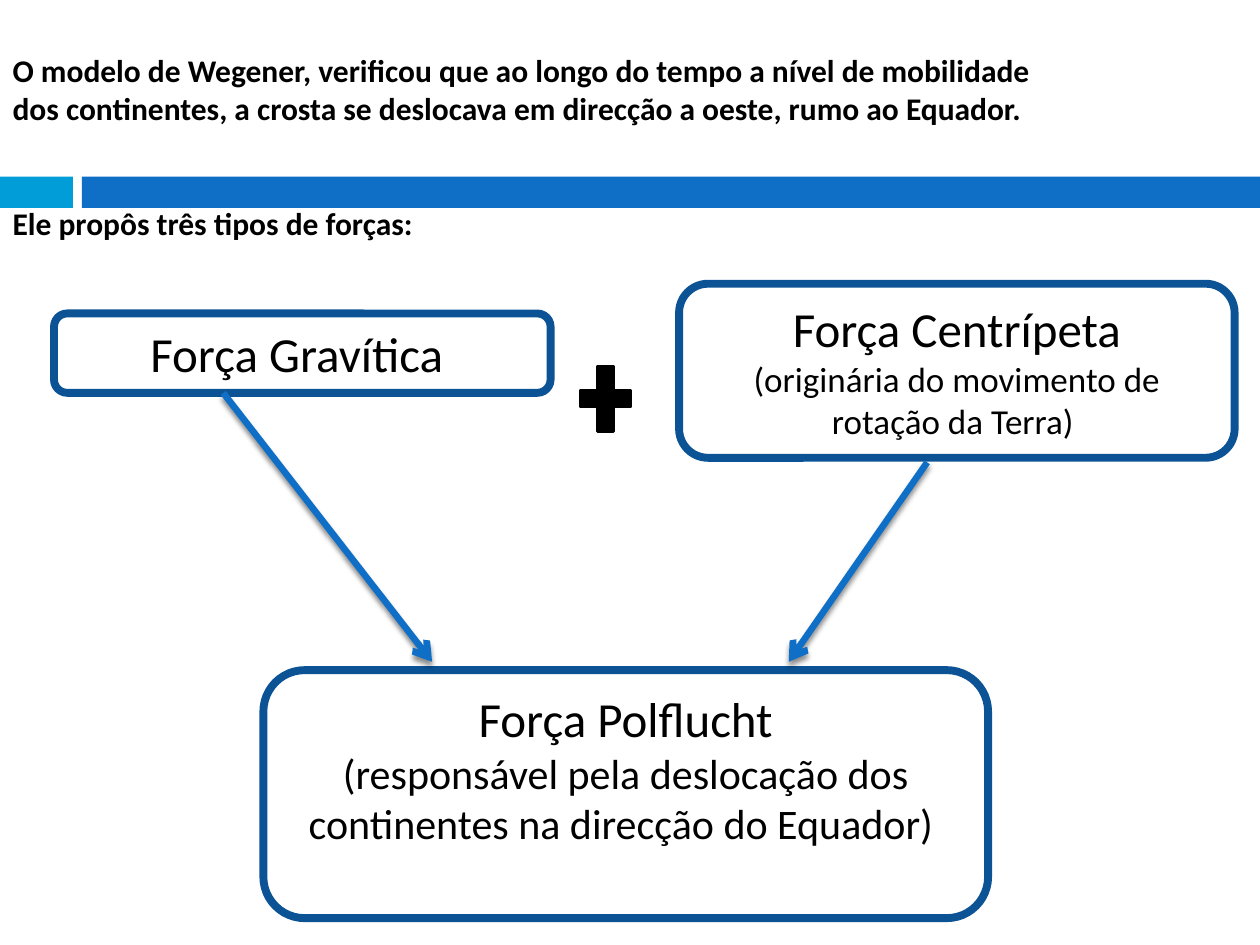
from lxml import etree
from pptx import Presentation
from pptx import util as u
from pptx.dml.color import RGBColor
from pptx.enum import shapes, text
from pptx.oxml import parse_xml
from pptx.oxml.ns import nsdecls, qn

COLOURS = {"black": "000000", "border": "0B5394", "arrow": "0F6FC6",
           "accent": "009DD9", "band": "0F6FC6"}


def colour(name):
    return RGBColor.from_string(COLOURS[name])


class ForcesSlide:
    font_name = "Calibri"

    def __init__(self, deck):
        self.slide = deck.slides.add_slide(deck.slide_layouts[5])

    def paragraph(self, frame, index, words, size, align, bold=False):
        para = frame.paragraphs[0] if index == 0 else frame.add_paragraph()
        para.alignment = align
        run = para.add_run()
        run.text = words
        run.font.name = self.font_name
        run.font.size = u.Pt(size)
        run.font.bold = bold
        run.font.color.rgb = colour("black")
        return para

    def title(self, left, top, width, height, sentences, gap):
        heading = self.slide.shapes.title
        heading.left, heading.top = u.Cm(left), u.Cm(top)
        heading.width, heading.height = u.Cm(width), u.Cm(height)
        frame = heading.text_frame
        frame.word_wrap = True
        frame.auto_size = text.MSO_AUTO_SIZE.NONE
        frame.vertical_anchor = text.MSO_ANCHOR.TOP
        for index, sentence in enumerate(sentences):
            para = self.paragraph(frame, index, sentence, 18, text.PP_ALIGN.LEFT, True)
            para.space_before = u.Pt(gap if index else 0)

    def shape(self, kind, left, top, width, height, fill=None, line=None, weight=0):
        item = self.slide.shapes.add_shape(
            kind, u.Cm(left), u.Cm(top), u.Cm(width), u.Cm(height))
        item.shadow.inherit = False
        if fill:
            item.fill.solid()
            item.fill.fore_color.rgb = colour(fill)
        else:
            item.fill.background()
        if line:
            item.line.color.rgb = colour(line)
            item.line.width = u.Pt(weight)
        else:
            item.line.fill.background()
        return item

    def force(self, left, top, width, height, lines):
        """Outlined rounded box; lines are (words, size) pairs."""
        box = self.shape(shapes.MSO_SHAPE.ROUNDED_RECTANGLE, left, top, width, height,
                         line="border", weight=4.5)
        frame = box.text_frame
        frame.word_wrap = True
        frame.vertical_anchor = text.MSO_ANCHOR.TOP
        for index, (words, size) in enumerate(lines):
            self.paragraph(frame, index, words, size, text.PP_ALIGN.CENTER)

    def plus(self, left, top, width, height):
        sign = self.shape(shapes.MSO_SHAPE.MATH_PLUS, left, top, width, height,
                          "black", "black", 1.5)
        sign.adjustments[0] = 0.235

    def arrow(self, start, end):
        link = self.slide.shapes.add_connector(
            shapes.MSO_CONNECTOR.STRAIGHT, *(u.Cm(value) for value in start + end))
        link.line.color.rgb = colour("arrow")
        link.line.width = u.Pt(3.75)
        etree.SubElement(link.line._get_or_add_ln(), qn("a:tailEnd"), type="arrow")
        link._element.spPr.append(parse_xml(
            f'<a:effectLst {nsdecls("a")}>'
            f'<a:outerShdw blurRad="{u.Pt(3)}" dist="{u.Pt(2.4)}" dir="5400000" rotWithShape="0">'
            f'<a:srgbClr val="{COLOURS["black"]}"><a:alpha val="45000"/></a:srgbClr>'
            '</a:outerShdw></a:effectLst>'))


def main():
    deck = Presentation()
    deck.slide_width, deck.slide_height = u.Cm(25.4), u.Cm(19.05)
    forces = ForcesSlide(deck)

    for left, width, fill in ((0, 1.47, "accent"), (1.65, 23.75, "band")):
        forces.shape(shapes.MSO_SHAPE.RECTANGLE, left, 3.56, width, 0.63, fill)

    forces.title(0, 0.91, 21.79, 4.88, [
        "O modelo de Wegener, verificou que ao longo do tempo a nível de mobilidade "
        "dos continentes, a crosta se deslocava em direcção a oeste, rumo ao Equador.",
        "Ele propôs três tipos de forças:"], gap=44)

    forces.force(1.09, 6.32, 10.01, 1.6, [("Força Gravítica ", 28)])
    forces.force(13.69, 5.72, 11.2, 3.51, [
        ("Força Centrípeta", 28),
        ("(originária do movimento de rotação da Terra) ", 20)])
    forces.plus(11.51, 7.14, 1.4, 1.8)
    forces.force(5.31, 13.51, 14.61, 5, [
        ("Força Polflucht", 28),
        ("(responsável pela deslocação dos continentes na direcção do Equador) ", 24)])

    forces.arrow((4.5, 7.92), (8.71, 13.34))
    forces.arrow((18.69, 9.32), (15.9, 13.34))
    deck.save("out.pptx")


if __name__ == "__main__":
    main()
